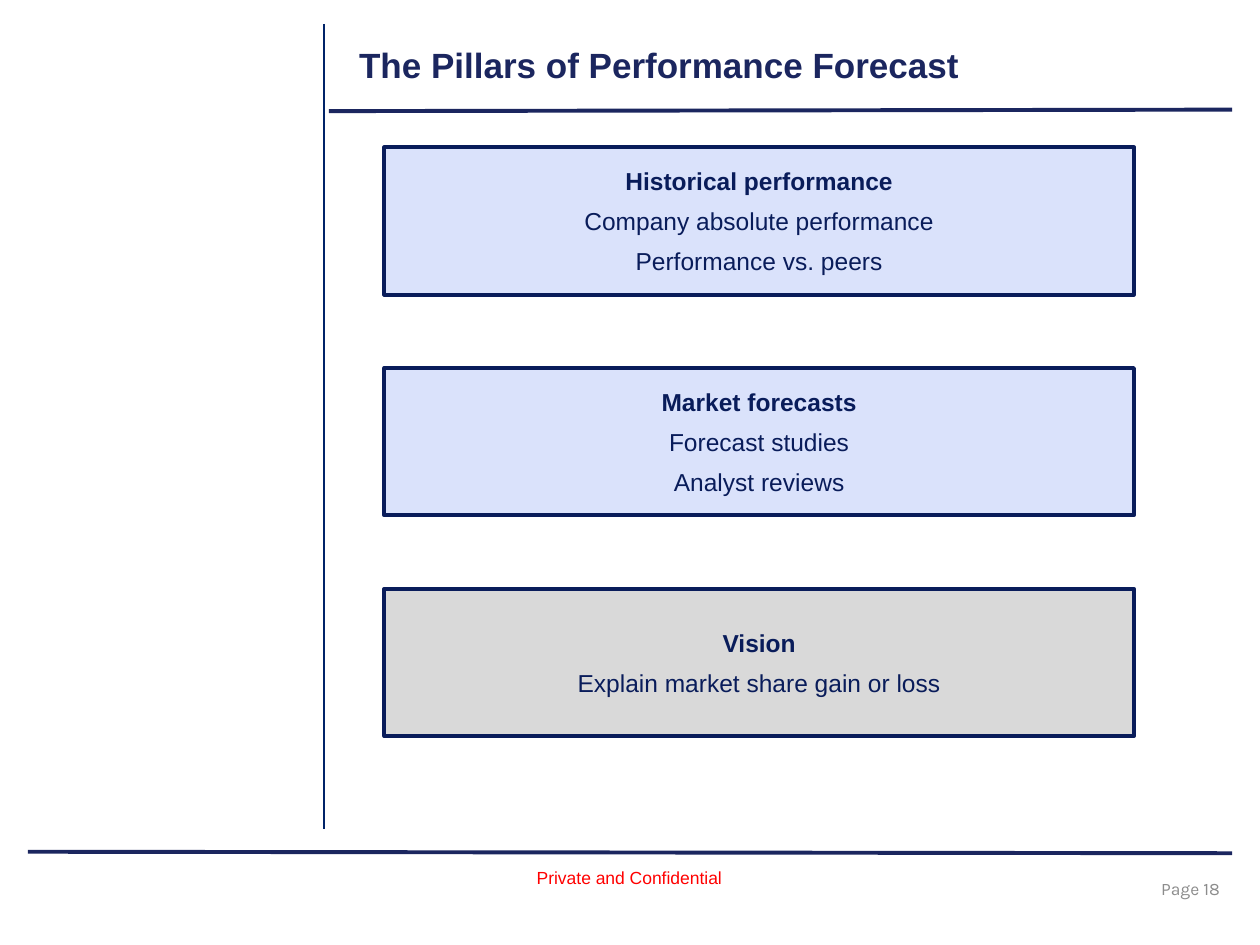
from lxml import etree
from pptx import Presentation
from pptx import util as u
from pptx.dml.color import RGBColor
from pptx.enum import shapes, text
from pptx.oxml.ns import qn

COLOURS = {
    "background": "FFFFFF",
    "rule": "1B265F",
    "divider": "002368",
    "navy": "091C5A",
    "pale_blue": "DAE2FB",
    "grey": "D9D9D9",
    "page": "8C8C8C",
    "notice": "FF0000",
}


def colour(name):
    return RGBColor.from_string(COLOURS[name])


class SlideBuilder:
    """Holds the style and the slide being built."""

    font = "Arial"
    rule_width = u.Pt(2.25)

    def __init__(self, slide):
        self.slide = slide
        slide.background.fill.solid()
        slide.background.fill.fore_color.rgb = colour("background")

    def format_runs(self, paragraph, size, colour_name, bold=False, font=None):
        for run in paragraph.runs:
            run.font.name = font or self.font
            run.font.size = u.Pt(size)
            run.font.bold = bold
            run.font.color.rgb = colour(colour_name)

    def line(self, x1, y1, x2, y2, colour_name, width):
        connector = self.slide.shapes.add_connector(
            shapes.MSO_CONNECTOR.STRAIGHT, u.Cm(x1), u.Cm(y1), u.Cm(x2), u.Cm(y2))
        connector.line.color.rgb = colour(colour_name)
        connector.line.width = width
        etree.SubElement(connector._element.spPr, qn("a:effectLst"))

    def label(self, left, top, width, height, words, size, colour_name, bold=False,
              font=None, align=text.PP_ALIGN.LEFT, anchor=text.MSO_ANCHOR.TOP, wrap=True):
        shape = self.slide.shapes.add_textbox(
            u.Cm(left), u.Cm(top), u.Cm(width), u.Cm(height))
        frame = shape.text_frame
        frame.word_wrap = wrap
        frame.vertical_anchor = anchor
        frame.text = words
        frame.paragraphs[0].alignment = align
        self.format_runs(frame.paragraphs[0], size, colour_name, bold, font)

    def pillar(self, left, top, width, height, fill, lines):
        shape = self.slide.shapes.add_shape(
            shapes.MSO_SHAPE.RECTANGLE, u.Cm(left), u.Cm(top), u.Cm(width), u.Cm(height))
        shape.shadow.inherit = False
        shape.fill.solid()
        shape.fill.fore_color.rgb = colour(fill)
        shape.line.color.rgb = colour("navy")
        shape.line.width = self.rule_width
        frame = shape.text_frame
        frame.word_wrap = True
        frame.vertical_anchor = text.MSO_ANCHOR.MIDDLE
        frame.text = "\n".join(lines)
        for index, paragraph in enumerate(frame.paragraphs):
            paragraph.alignment = text.PP_ALIGN.CENTER
            paragraph.space_after = u.Pt(6)
            self.format_runs(paragraph, 14, "navy", bold=index == 0)


def main():
    presentation = Presentation()
    presentation.slide_width, presentation.slide_height = u.Cm(25.4), u.Cm(19.05)
    builder = SlideBuilder(presentation.slides.add_slide(presentation.slide_layouts[6]))

    # Header and footer rules, then the vertical divider
    builder.line(0.56, 17.17, 24.84, 17.2, "rule", builder.rule_width)
    builder.line(6.63, 2.24, 24.84, 2.21, "rule", builder.rule_width)
    for top, bottom in ((0.48, 2.18), (0.64, 16.71)):
        builder.line(6.53, top, 6.53, bottom, "divider", u.Pt(0.75))

    # Footer
    builder.label(19.02, 17.4, 5.82, 1.02, "Page 18", 10, "page", font="Karla",
                  align=text.PP_ALIGN.RIGHT, anchor=text.MSO_ANCHOR.MIDDLE)
    builder.label(10.57, 17.35, 4.27, 0.69, "Private and Confidential", 10, "notice",
                  wrap=False)

    # Title
    builder.label(6.99, 0.76, 17.15, 1.35, "The Pillars of Performance Forecast", 20,
                  "rule", bold=True)

    # Pillars, evenly stacked
    pillars = [
        ("pale_blue", ["Historical performance", "Company absolute performance",
                       "Performance vs. peers"]),
        ("pale_blue", ["Market forecasts", "Forecast studies", "Analyst reviews"]),
        ("grey", ["Vision", "Explain market share gain or loss"]),
    ]
    first_top, pitch = 2.97, 4.45
    for index, (fill, lines) in enumerate(pillars):
        builder.pillar(7.75, first_top + index * pitch, 15.11, 2.97, fill, lines)

    presentation.save("out.pptx")


if __name__ == "__main__":
    main()
